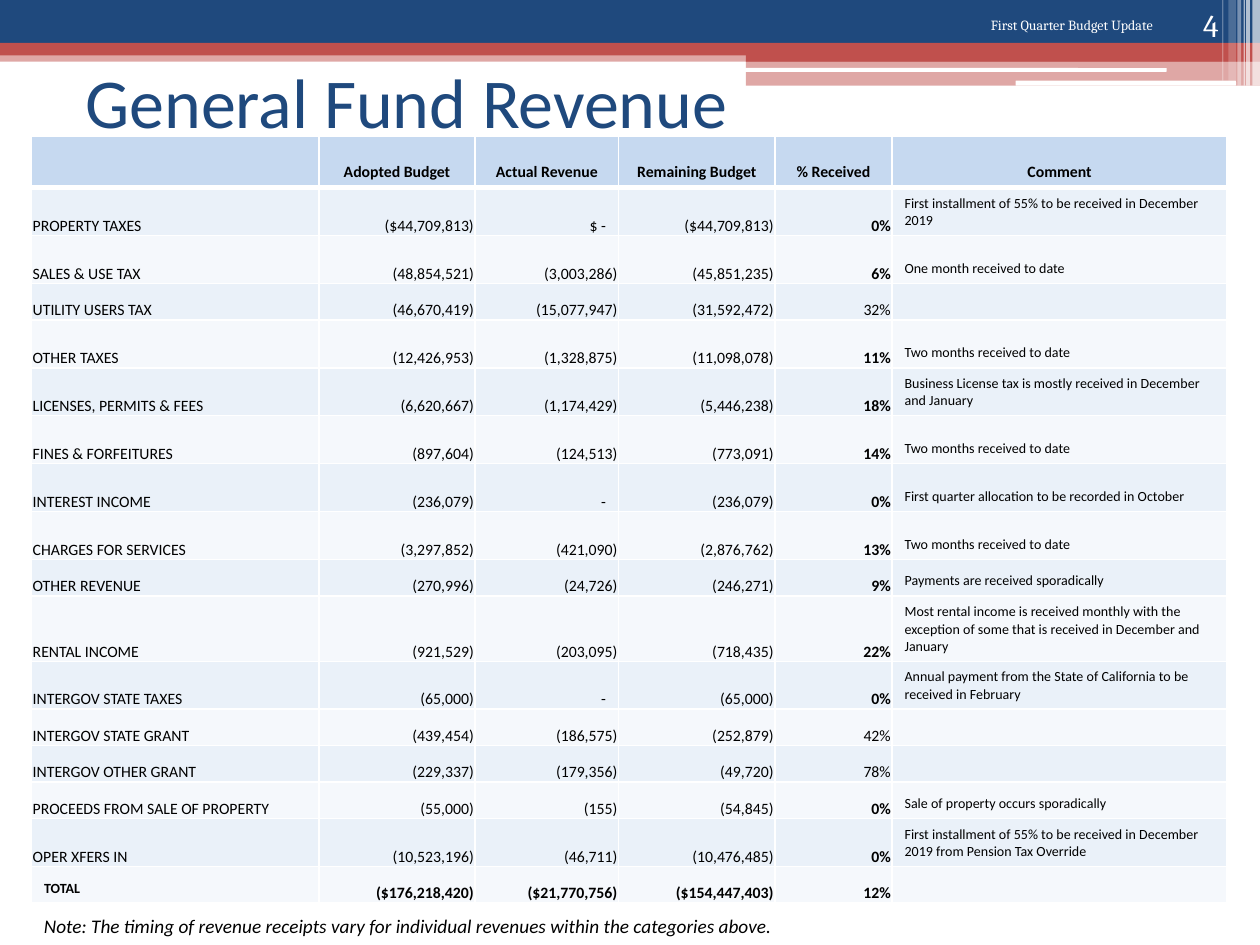
from lxml import etree
from pptx import Presentation
from pptx import util as u
from pptx.dml import color
from pptx.enum import shapes, text
from pptx.oxml import ns

COLS, ROWS = 100, 75
CELL = u.Inches(0.1)
NAVY, RED, WHITE, BLACK = "1F497D", "C0504D", "FFFFFF", "000000"
HEADER_FILL, BANDS = "C6D9F0", ("EAF1F9", "F5F8FC")
LEFT, CENTER, RIGHT = text.PP_ALIGN.LEFT, text.PP_ALIGN.CENTER, text.PP_ALIGN.RIGHT
TOP, MIDDLE, BOTTOM = text.MSO_ANCHOR.TOP, text.MSO_ANCHOR.MIDDLE, text.MSO_ANCHOR.BOTTOM

COLUMN_WIDTHS = (22.8, 12.4, 11.4, 12.4, 9.3, 26.6)
HEADINGS = ("", "Adopted Budget", "Actual Revenue", "Remaining Budget", "% Received", "Comment")
HEADER_ROW, SHORT, TALL, TRIPLE = 4.1, 2.9, 3.8, 5.2
REVENUES = [
    (TALL, "PROPERTY TAXES", "($44,709,813)", "$ -", "($44,709,813)", "0%",
     "First installment of 55% to be received in December 2019"),
    (TALL, "SALES & USE TAX", "(48,854,521)", "(3,003,286)", "(45,851,235)", "6%",
     "One month received to date"),
    (SHORT, "UTILITY USERS TAX", "(46,670,419)", "(15,077,947)", "(31,592,472)", "32%", ""),
    (TALL, "OTHER TAXES", "(12,426,953)", "(1,328,875)", "(11,098,078)", "11%",
     "Two months received to date"),
    (TALL, "LICENSES, PERMITS & FEES", "(6,620,667)", "(1,174,429)", "(5,446,238)", "18%",
     "Business License tax is mostly received in December and January"),
    (TALL, "FINES & FORFEITURES", "(897,604)", "(124,513)", "(773,091)", "14%",
     "Two months received to date"),
    (TALL, "INTEREST INCOME", "(236,079)", "-", "(236,079)", "0%",
     "First quarter allocation to be recorded in October"),
    (TALL, "CHARGES FOR SERVICES", "(3,297,852)", "(421,090)", "(2,876,762)", "13%",
     "Two months received to date"),
    (SHORT, "OTHER REVENUE", "(270,996)", "(24,726)", "(246,271)", "9%",
     "Payments are received sporadically"),
    (TRIPLE, "RENTAL INCOME", "(921,529)", "(203,095)", "(718,435)", "22%",
     "Most rental income is received monthly with the exception of some that is "
     "received in December and January"),
    (TALL, "INTERGOV STATE TAXES", "(65,000)", "-", "(65,000)", "0%",
     "Annual payment from the State of California to be received in February"),
    (SHORT, "INTERGOV STATE GRANT", "(439,454)", "(186,575)", "(252,879)", "42%", ""),
    (SHORT, "INTERGOV OTHER GRANT", "(229,337)", "(179,356)", "(49,720)", "78%", ""),
    (SHORT, "PROCEEDS FROM SALE OF PROPERTY", "(55,000)", "(155)", "(54,845)", "0%",
     "Sale of property occurs sporadically"),
    (TALL, "OPER XFERS IN", "(10,523,196)", "(46,711)", "(10,476,485)", "0%",
     "First installment of 55% to be received in December 2019 from Pension Tax Override"),
    (SHORT, "TOTAL", "($176,218,420)", "($21,770,756)", "($154,447,403)", "12%", ""),
]


def rgb(value):
    return color.RGBColor.from_string(value)


def grid(*lengths):
    return [int(length * CELL) for length in lengths]


def within(box, left, top, width, height):
    return grid(box[0] + left, box[1] + top, width, height)


def style(paragraph, words, size, ink, align=LEFT, face="Calibri", bold=False, italic=False):
    paragraph.text = words
    paragraph.alignment = align
    font = paragraph.font
    font.name, font.size, font.bold, font.italic = face, u.Pt(size), bold, italic
    font.color.rgb = rgb(ink)


def add_label(slide, box, words, size, ink, anchor=TOP, **looks):
    frame = slide.shapes.add_textbox(*grid(*box)).text_frame
    frame.word_wrap = True
    frame.vertical_anchor = anchor
    style(frame.paragraphs[0], words, size, ink, **looks)


def add_bar(slide, place, fill, opacity=100, kind=shapes.MSO_SHAPE.RECTANGLE):
    bar = slide.shapes.add_shape(kind, *place)
    bar.shadow.inherit = False
    bar.line.fill.background()
    bar.fill.solid()
    bar.fill.fore_color.rgb = rgb(fill)
    if opacity < 100:
        tint = bar.fill._xPr.find(".//" + ns.qn("a:srgbClr"))
        etree.SubElement(tint, ns.qn("a:alpha"), val=str(opacity * 1000))


def add_masthead(slide, box):
    width, height = box[2:]
    step = 59.2
    bands = [
        (0, 4, width, 0.9, RED, 50),
        (0, 0, width, 3.4, NAVY, 100),
        (0, 3.4, width, 1, RED, 100),
        (step, 3.9, width - step, 1, RED, 100),
        (step, 4.8, width - step, 2, RED, 50),
    ]
    for *place, fill, opacity in bands:
        add_bar(slide, within(box, *place), fill, opacity)
    for place in ((59.1, 5.4, 33.5, 0.3), (80.6, 6.4, 17.5, 0.4)):
        add_bar(slide, within(box, *place), WHITE, kind=shapes.MSO_SHAPE.ROUNDED_RECTANGLE)
    stripes = [
        (99.4, 0.6, height, 65), (98.9, 0.3, height, 65), (98.7, 0.1, height, 60),
        (98.2, 0.3, height, 40), (97.5, 0.6, height - 0.4, 20), (97, 0.1, height - 0.4, 30),
    ]
    for left, thickness, length, opacity in stripes:
        add_bar(slide, within(box, left, 0, thickness, length), WHITE, opacity)


def add_borders(cell, bottom):
    properties = cell._tc.get_or_add_tcPr()
    for index, (side, points) in enumerate((("L", 1), ("R", 1), ("T", 1), ("B", bottom))):
        line = etree.Element(ns.qn("a:ln" + side), w=str(u.Pt(points)))
        fill = etree.SubElement(line, ns.qn("a:solidFill"))
        etree.SubElement(fill, ns.qn("a:srgbClr"), val=WHITE)
        properties.insert(index, line)


def fill_cell(cell, words, size, fill, align, bold, bottom=1, snug=False):
    cell.vertical_anchor = BOTTOM
    if snug:
        cell.margin_left = cell.margin_top = u.Inches(0.01)
        cell.margin_right = u.Inches(0.1 if words.endswith("-") else 0.01)
        cell.margin_bottom = 0
    cell.fill.solid()
    cell.fill.fore_color.rgb = rgb(fill)
    add_borders(cell, bottom)
    paragraph = cell.text_frame.paragraphs[0]
    style(paragraph, words, size, BLACK, align, bold=bold)
    if not words:
        paragraph._p.get_or_add_endParaRPr().set("sz", str(size * 100))


def add_revenue_table(slide, box):
    frame = slide.shapes.add_table(len(REVENUES) + 1, len(HEADINGS), *grid(*box))
    table = frame.table
    table.first_row = table.horz_banding = False
    for column, width in zip(table.columns, COLUMN_WIDTHS):
        column.width = int(width * CELL)
    table.rows[0].height = int(HEADER_ROW * CELL)
    for column, heading in enumerate(HEADINGS):
        fill_cell(table.cell(0, column), heading, 9, HEADER_FILL, CENTER, True, bottom=3)
    for row, (height, *values) in enumerate(REVENUES, 1):
        table.rows[row].height = int(height * CELL)
        total = values[0] == "TOTAL"
        comment = len(values) - 1
        percent = comment - 1
        for column, words in enumerate(values):
            roomy = column == comment or (total and column == 0)
            fill_cell(
                table.cell(row, column), words, 8 if roomy else 9, BANDS[(row - 1) % 2],
                LEFT if column in (0, comment) else RIGHT,
                total or (column == percent and bool(values[comment])),
                snug=not roomy,
            )


def main():
    deck = Presentation()
    deck.slide_width, deck.slide_height = grid(COLS, ROWS)
    slide = deck.slides.add_slide(deck.slide_layouts[6])
    add_masthead(slide, (0, 0, COLS, 6.8))
    add_label(slide, (5.8, 4.2, 90, 7.5), "General Fund Revenue", 40, NAVY, MIDDLE)
    add_revenue_table(slide, (2.5, 10.8, 95, 60.6))
    add_label(slide, (75, 0.8, 17.5, 5), "First Quarter Budget Update", 8, WHITE,
              align=RIGHT, face="Cambria")
    add_label(slide, (89.4, 0, 8.3, 4), "4", 18, WHITE, BOTTOM, align=RIGHT, face="Cambria")
    add_label(slide, (2.5, 72.1, 68.3, 2.9),
              "Note: The timing of revenue receipts vary for individual revenues "
              "within the categories above.", 11, BLACK, italic=True)
    deck.save("out.pptx")


if __name__ == "__main__":
    main()
